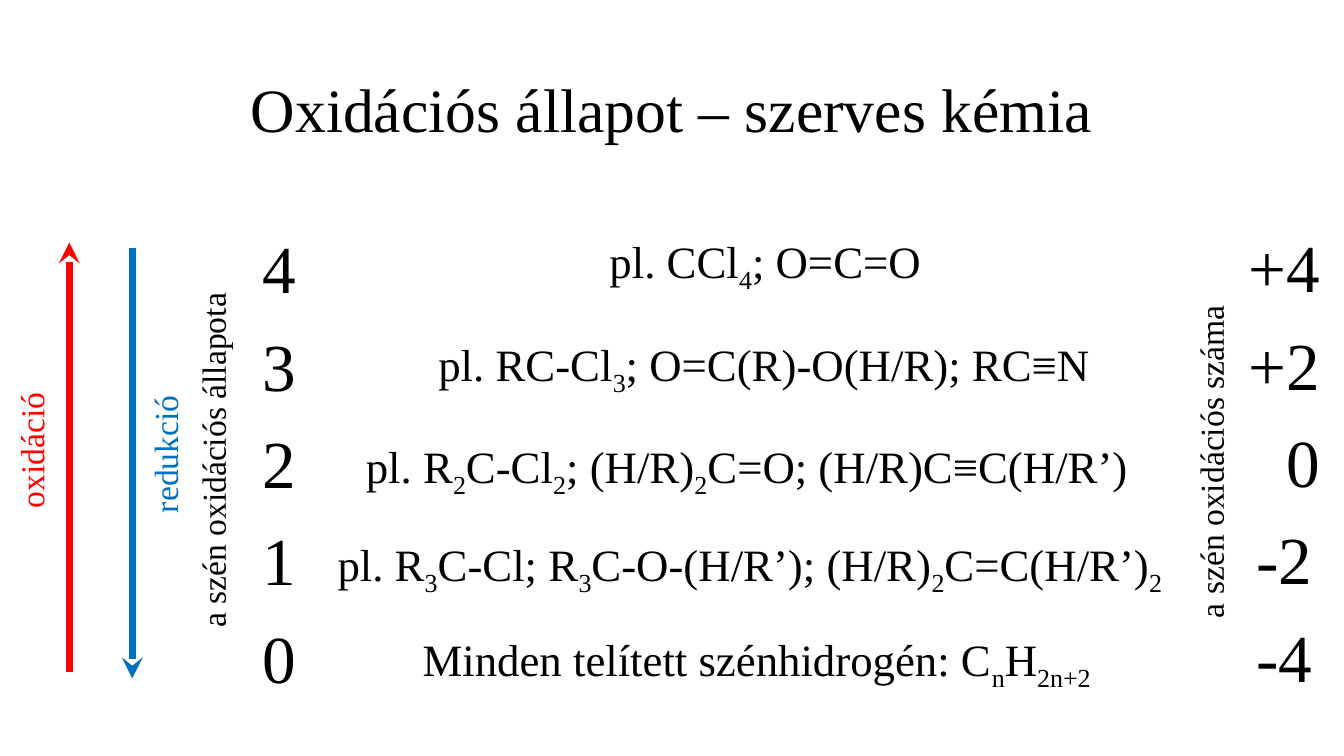
"""Build a slide on the oxidation states of carbon in organic chemistry."""
import dataclasses
import typing

import lxml.etree
import pptx
import pptx.dml.color
import pptx.enum.shapes
import pptx.enum.text
import pptx.oxml.ns
import pptx.presentation
import pptx.slide
import pptx.util

EMU_PER_PX = 9525
FONT_NAME = "Times New Roman"
COLOURS = {"text": "000000", "oxidation": "FF0000", "reduction": "0070C0"}
ALIGN = pptx.enum.text.PP_ALIGN
ANCHOR = pptx.enum.text.MSO_ANCHOR
AUTO_SIZE = pptx.enum.text.MSO_AUTO_SIZE
GROWING_FRAME = {"word_wrap": False, "auto_size": AUTO_SIZE.SHAPE_TO_FIT_TEXT}
TITLE_FRAME = {"word_wrap": True, "auto_size": AUTO_SIZE.NONE, "vertical_anchor": ANCHOR.MIDDLE}


@dataclasses.dataclass(frozen=True)
class Line:
    text: str
    alignment: typing.Any = ALIGN.LEFT


@dataclasses.dataclass(frozen=True)
class Label:
    lines: tuple[Line, ...]
    left: int
    top: int
    width: int
    height: int
    size: int
    colour: str = "text"
    rotation: int = 0
    frame_format: dict = dataclasses.field(default_factory=lambda: GROWING_FRAME)
    paragraph_format: dict = dataclasses.field(default_factory=dict)


@dataclasses.dataclass(frozen=True)
class Arrow:
    x: int
    start_y: int
    end_y: int
    colour: str


def side_label(text: str, left: int, top: int, width: int, colour: str = "text") -> Label:
    return Label((Line(text),), left, top, width, 48, 24, colour, rotation=270)


def example(text: str, left: int, top: int, width: int) -> Label:
    return Label((Line(text),), left, top, width, 61, 32)


def number_column(lines: tuple[Line, ...], left: int, top: int, width: int) -> Label:
    return Label(lines, left, top, width, 462, 48,
                 paragraph_format={"space_after": pptx.util.Pt(12)})


TITLE = Label((Line("Oxidációs állapot – szerves kémia", ALIGN.CENTER),), 88, 38, 1104, 139, 44,
              frame_format=TITLE_FRAME, paragraph_format={"line_spacing": 0.9})

SIDE_LABELS = (
    side_label("oxidáció", -36, 404, 131, "oxidation"),
    side_label("redukció", 91, 408, 132, "reduction"),
    side_label("a szén oxidációs száma", 993, 414, 320),
    side_label("a szén oxidációs állapota", 32, 413, 341),
)

NUMBER_COLUMNS = (
    number_column(tuple(Line(state) for state in "43210"), 241, 211, 52),
    number_column(
        tuple(Line(number, ALIGN.RIGHT if number == "0" else ALIGN.CENTER)
              for number in ("+4", "+2", "0", "-2", "-4")),
        1179, 210, 88),
)

EXAMPLES = (
    example("pl. CCl_4_; O=C=O", 571, 218, 321),
    example("pl. RC-Cl_3_; O=C(R)-O(H/R); RC≡N", 408, 316, 647),
    example("pl. R_2_C-Cl_2_; (H/R)_2_C=O; (H/R)C≡C(H/R’)", 339, 413, 786),
    example("pl. R_3_C-Cl; R_3_C-O-(H/R’); (H/R)_2_C=C(H/R’)_2_", 312, 506, 840),
    example("Minden telített szénhidrogén: C_n_H_2n+2_", 393, 597, 679),
)

ARROWS = (Arrow(66, 640, 231, "oxidation"), Arrow(126, 236, 646, "reduction"))


def px(*lengths: int) -> list[pptx.util.Emu]:
    return [pptx.util.Emu(length * EMU_PER_PX) for length in lengths]


def apply_format(target: typing.Any, values: dict[str, typing.Any]) -> None:
    for name, value in values.items():
        setattr(target, name, value)


def rgb(colour: str) -> pptx.dml.color.RGBColor:
    return pptx.dml.color.RGBColor.from_string(COLOURS[colour])


def draw_label(slide: pptx.slide.Slide, label: Label) -> None:
    shape = slide.shapes.add_textbox(*px(label.left, label.top, label.width, label.height))
    shape.rotation = label.rotation
    frame = shape.text_frame
    apply_format(frame, label.frame_format)
    for index, line in enumerate(label.lines):
        paragraph = frame.add_paragraph() if index else frame.paragraphs[0]
        apply_format(paragraph, {"alignment": line.alignment, **label.paragraph_format})
        for position, text in enumerate(line.text.split("_")):
            if not text:
                continue
            run = paragraph.add_run()
            run.text = text
            apply_format(run.font, {"name": FONT_NAME, "size": pptx.util.Pt(label.size)})
            run.font.color.rgb = rgb(label.colour)
            if position % 2:
                run._r.get_or_add_rPr().set("baseline", "-25000")


def draw_arrow(slide: pptx.slide.Slide, arrow: Arrow) -> None:
    connector = slide.shapes.add_connector(
        pptx.enum.shapes.MSO_CONNECTOR.STRAIGHT,
        *px(arrow.x, arrow.start_y, arrow.x, arrow.end_y))
    connector.line.width = pptx.util.Pt(5)
    connector.line.color.rgb = rgb(arrow.colour)
    line = connector.line._get_or_add_ln()
    lxml.etree.SubElement(line, pptx.oxml.ns.qn("a:tailEnd"), type="stealth")
    lxml.etree.SubElement(connector._element.spPr, pptx.oxml.ns.qn("a:effectLst"))


def build() -> pptx.presentation.Presentation:
    presentation = pptx.Presentation()
    presentation.slide_width, presentation.slide_height = px(1280, 720)
    slide = presentation.slides.add_slide(presentation.slide_layouts[6])
    for arrow in ARROWS:
        draw_arrow(slide, arrow)
    for label in (TITLE, *SIDE_LABELS, *NUMBER_COLUMNS, *EXAMPLES):
        draw_label(slide, label)
    return presentation


def main() -> None:
    build().save("out.pptx")


if __name__ == "__main__":
    main()
